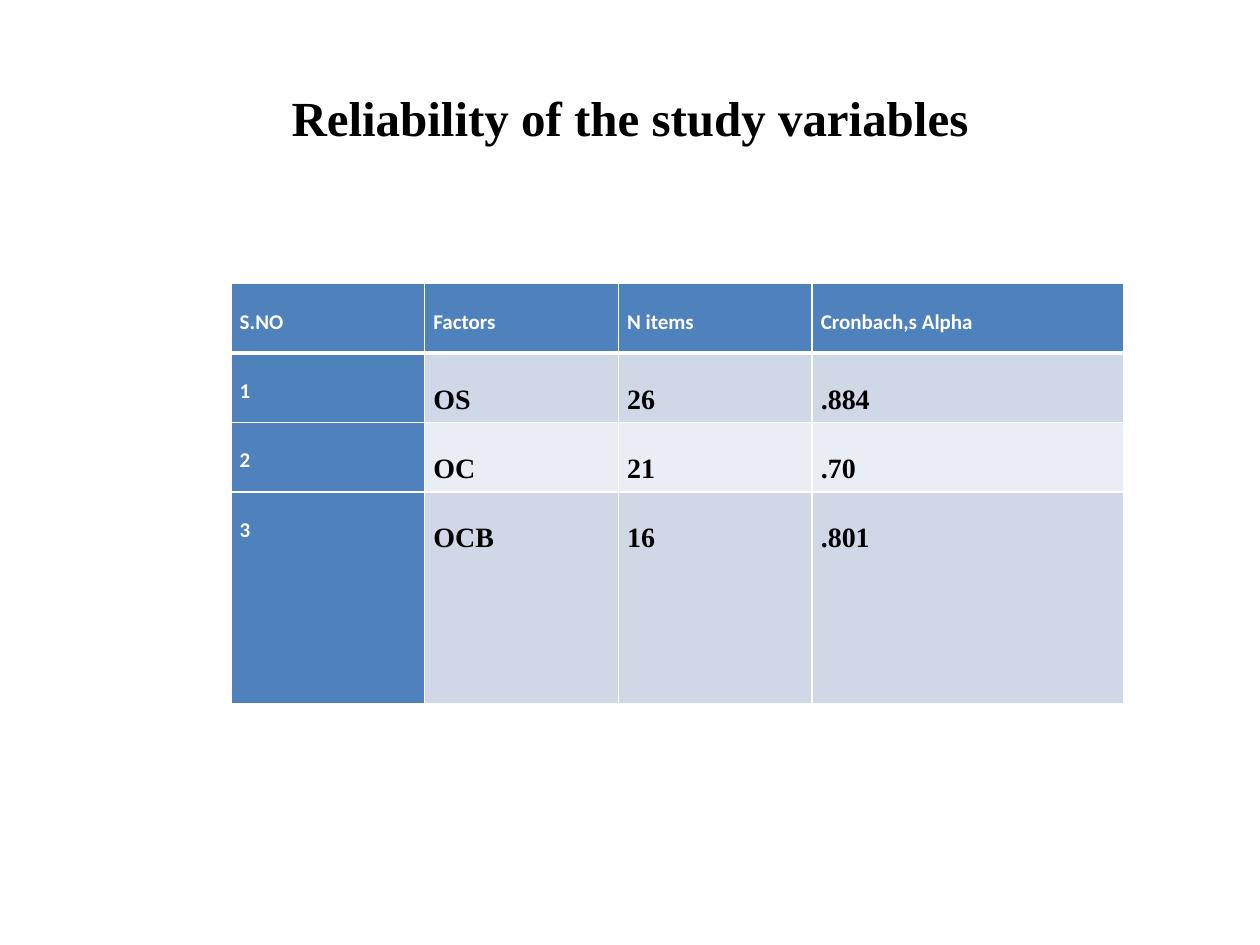
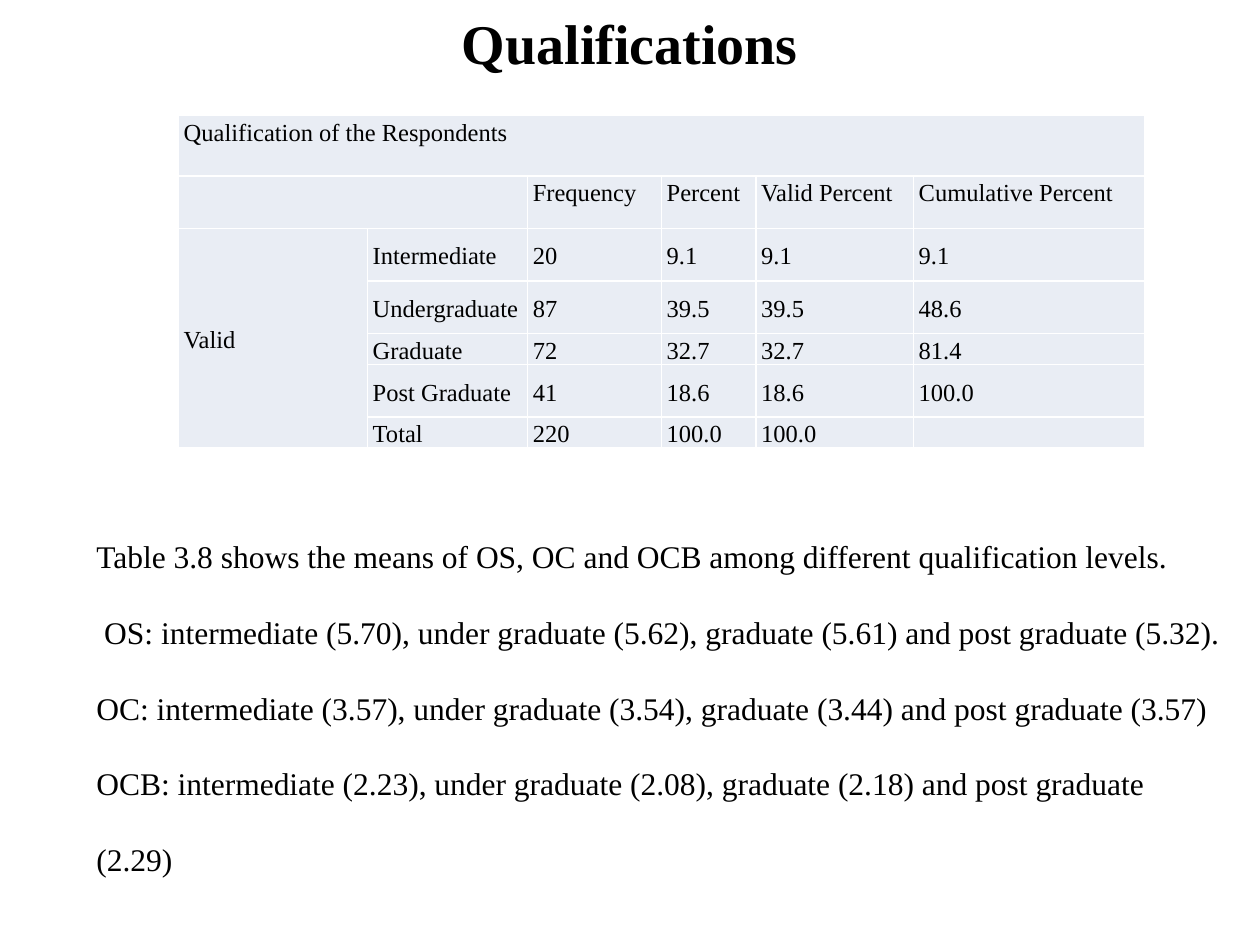
from dataclasses import dataclass

from lxml import etree
from pptx import Presentation
from pptx.dml.color import RGBColor
from pptx.enum.text import MSO_ANCHOR, MSO_AUTO_SIZE, PP_ALIGN
from pptx.oxml.ns import qn
from pptx.util import Pt

TITLE_ONLY = 5
TOP, MIDDLE = MSO_ANCHOR.TOP, MSO_ANCHOR.MIDDLE
CENTER, JUSTIFY = PP_ALIGN.CENTER, PP_ALIGN.JUSTIFY
NO_AUTOFIT, GROW = MSO_AUTO_SIZE.NONE, MSO_AUTO_SIZE.SHAPE_TO_FIT_TEXT

BLACK = RGBColor(0x00, 0x00, 0x00)
WHITE = RGBColor(0xFF, 0xFF, 0xFF)
BLUE = RGBColor(0x4F, 0x81, 0xBD)
BAND_DARK = RGBColor(0xD0, 0xD8, 0xE8)
BAND_LIGHT = RGBColor(0xE9, 0xED, 0xF4)
SERIF, SANS = "Times New Roman", "Calibri"

RELIABILITY = [
    ["S.NO", "Factors", "N items", "Cronbach,s Alpha"],
    ["1", "OS", "26", ".884"],
    ["2", "OC", "21", ".70"],
    ["3", "OCB", "16", ".801"],
]
QUALIFICATIONS = [
    ["Qualification of the Respondents", "", "", "", "", ""],
    ["", "", "Frequency", "Percent", "Valid Percent", "Cumulative Percent"],
    ["Valid", "Intermediate", "20", "9.1", "9.1", "9.1"],
    ["", "Undergraduate", "87", "39.5", "39.5", "48.6"],
    ["", "Graduate", "72", "32.7", "32.7", "81.4"],
    ["", "Post Graduate", "41", "18.6", "18.6", "100.0"],
    ["", "Total", "220", "100.0", "100.0", ""],
]
MEANS = [
    "Table 3.8 shows the means of OS, OC and OCB among different qualification levels.",
    " OS: intermediate (5.70), under graduate (5.62), graduate (5.61) and post graduate (5.32).",
    "OC: intermediate (3.57), under graduate (3.54), graduate (3.44) and post graduate (3.57)",
    "OCB: intermediate (2.23), under graduate (2.08), graduate (2.18) and post graduate (2.29)",
]


@dataclass(frozen=True)
class CellStyle:
    size: float
    fill: RGBColor
    font: str = SERIF
    color: RGBColor = BLACK
    bold: bool = False
    anchor: MSO_ANCHOR = TOP
    side_margin: float = 0
    indent: float = 0
    line_spacing: float = 1.15
    bottom_line: float = 1


@dataclass(frozen=True)
class Grid:
    left: float
    top: float
    columns: list[float]
    rows: list[float]


def set_values(target, values: dict) -> None:
    for name, value in values.items():
        setattr(target, name, value)


def set_font(font, size: float, name: str = SERIF, color: RGBColor = BLACK,
             bold: bool = False) -> None:
    set_values(font, {"size": Pt(size), "name": name, "bold": bold})
    font.color.rgb = color


def place(shape, left: float, top: float, width: float, height: float) -> None:
    set_values(shape, {"left": Pt(left), "top": Pt(top),
                       "width": Pt(width), "height": Pt(height)})


def add_titled_slide(deck, title: str, size: float, top: float, height: float):
    slide = deck.slides.add_slide(deck.slide_layouts[TITLE_ONLY])
    heading = slide.shapes.title
    place(heading, 36, top, 648, height)
    set_values(heading.text_frame, {"text": title, "vertical_anchor": MIDDLE,
                                    "word_wrap": True, "auto_size": NO_AUTOFIT})
    paragraph = heading.text_frame.paragraphs[0]
    paragraph.alignment = CENTER
    set_font(paragraph.runs[0].font, size, bold=True)
    return slide


def add_borders(cell, bottom: float) -> None:
    properties = cell._tc.get_or_add_tcPr()
    for side, width in {"L": 1, "R": 1, "T": 1, "B": bottom}.items():
        line = etree.SubElement(properties, qn(f"a:ln{side}"), w=str(Pt(width)))
        solid = etree.SubElement(line, qn("a:solidFill"))
        etree.SubElement(solid, qn("a:srgbClr"), val=str(WHITE))


def fill_cell(cell, text: str, style: CellStyle) -> None:
    add_borders(cell, style.bottom_line)
    cell.fill.solid()
    cell.fill.fore_color.rgb = style.fill
    set_values(cell, {"margin_left": Pt(style.side_margin),
                      "margin_right": Pt(style.side_margin),
                      "margin_top": 0, "margin_bottom": 0,
                      "vertical_anchor": style.anchor})
    paragraph = cell.text_frame.paragraphs[0]
    set_values(paragraph, {"alignment": JUSTIFY, "line_spacing": style.line_spacing,
                           "space_before": Pt(6), "space_after": Pt(12)})
    set_values_xml = paragraph._p.get_or_add_pPr()
    set_values_xml.set("marL", str(Pt(style.indent)))
    if text:
        run = paragraph.add_run()
        run.text = text
        set_font(run.font, style.size, style.font, style.color, style.bold)
    else:
        etree.SubElement(paragraph._p, qn("a:endParaRPr"), sz=str(int(style.size * 100)))


def add_grid(slide, grid: Grid, content: list[list[str]], style_of):
    """Draw a table; style_of(row, column) gives the style of each cell."""
    table = slide.shapes.add_table(
        len(grid.rows), len(grid.columns), Pt(grid.left), Pt(grid.top),
        Pt(sum(grid.columns)), Pt(sum(grid.rows))).table
    set_values(table, {"first_row": False, "horz_banding": False})
    for column, width in zip(table.columns, grid.columns):
        column.width = Pt(width)
    for row, height in zip(table.rows, grid.rows):
        row.height = Pt(height)
    for r, texts in enumerate(content):
        for c, text in enumerate(texts):
            fill_cell(table.cell(r, c), text, style_of(r, c))
    return table


def reliability_style(row: int, column: int) -> CellStyle:
    shared = {"bold": True, "side_margin": 5, "line_spacing": 2}
    if row == 0 or column == 0:
        return CellStyle(12, BLUE, SANS, WHITE, bottom_line=1 if row else 3, **shared)
    return CellStyle(16, BAND_DARK if row % 2 else BAND_LIGHT, **shared)


def qualification_style(row: int, column: int) -> CellStyle:
    return CellStyle(14, BAND_LIGHT, anchor=MIDDLE if row >= 2 else TOP, indent=3)


def add_reliability_slide(deck) -> None:
    slide = add_titled_slide(deck, "Reliability of the study variables", 28, 21.6, 90)
    grid = Grid(132, 162, [110.7] * 3 + [178], [39.7] * 3 + [120.9])
    add_grid(slide, grid, RELIABILITY, reliability_style)


def add_qualifications_slide(deck) -> None:
    slide = add_titled_slide(deck, "Qualifications", 32, 0, 48)
    grid = Grid(102, 66, [108, 91.5, 76.5, 54, 90, 132],
                [34.5, 30, 30, 30, 15, 30, 15])
    table = add_grid(slide, grid, QUALIFICATIONS, qualification_style)
    for first, last in [((0, 0), (0, 5)), ((1, 0), (1, 1)), ((2, 0), (6, 0))]:
        table.cell(*first).merge(table.cell(*last))

    means = slide.shapes.add_textbox(Pt(48), Pt(282), Pt(660), Pt(219)).text_frame
    set_values(means, {"word_wrap": True, "auto_size": GROW, "text": "\n".join(MEANS)})
    for paragraph in means.paragraphs:
        paragraph.line_spacing = 2.0
        set_font(paragraph.runs[0].font, 18)


def main() -> None:
    deck = Presentation()
    set_values(deck, {"slide_width": Pt(720), "slide_height": Pt(540)})
    add_reliability_slide(deck)
    add_qualifications_slide(deck)
    deck.save("out.pptx")


if __name__ == "__main__":
    main()
